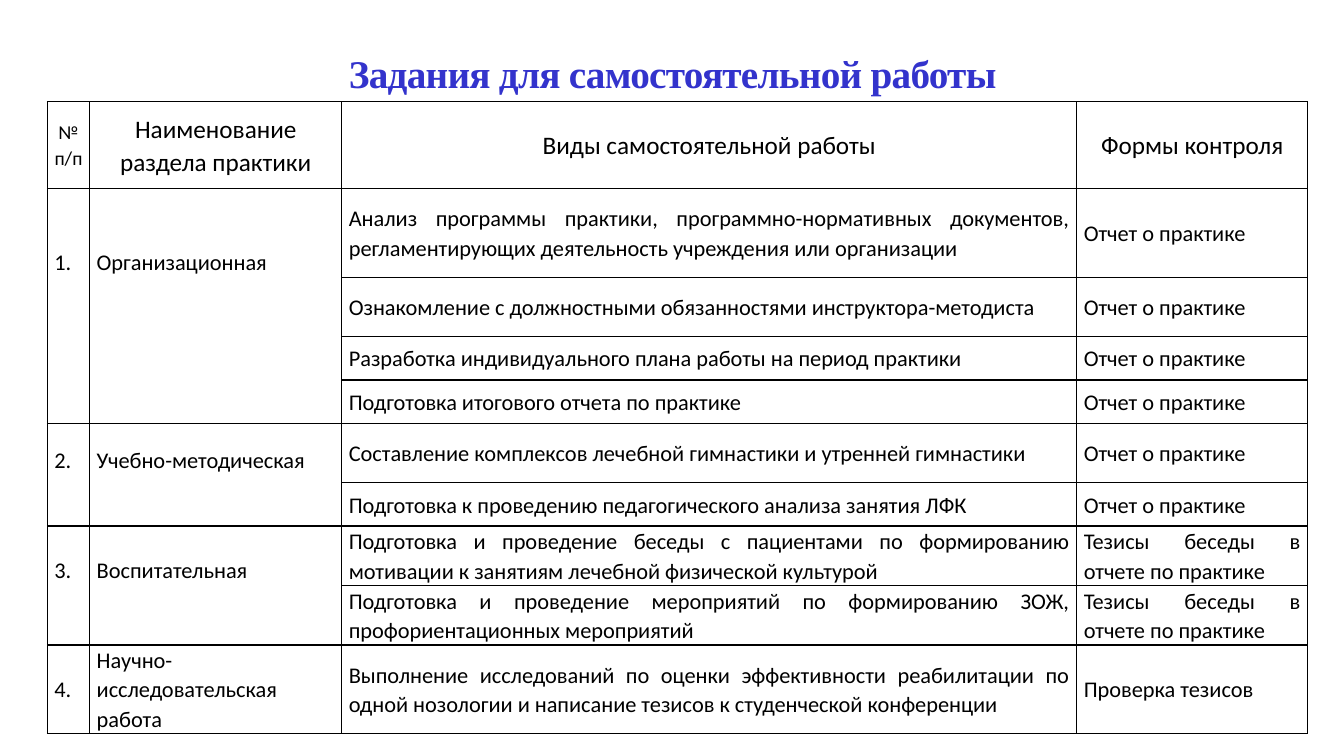
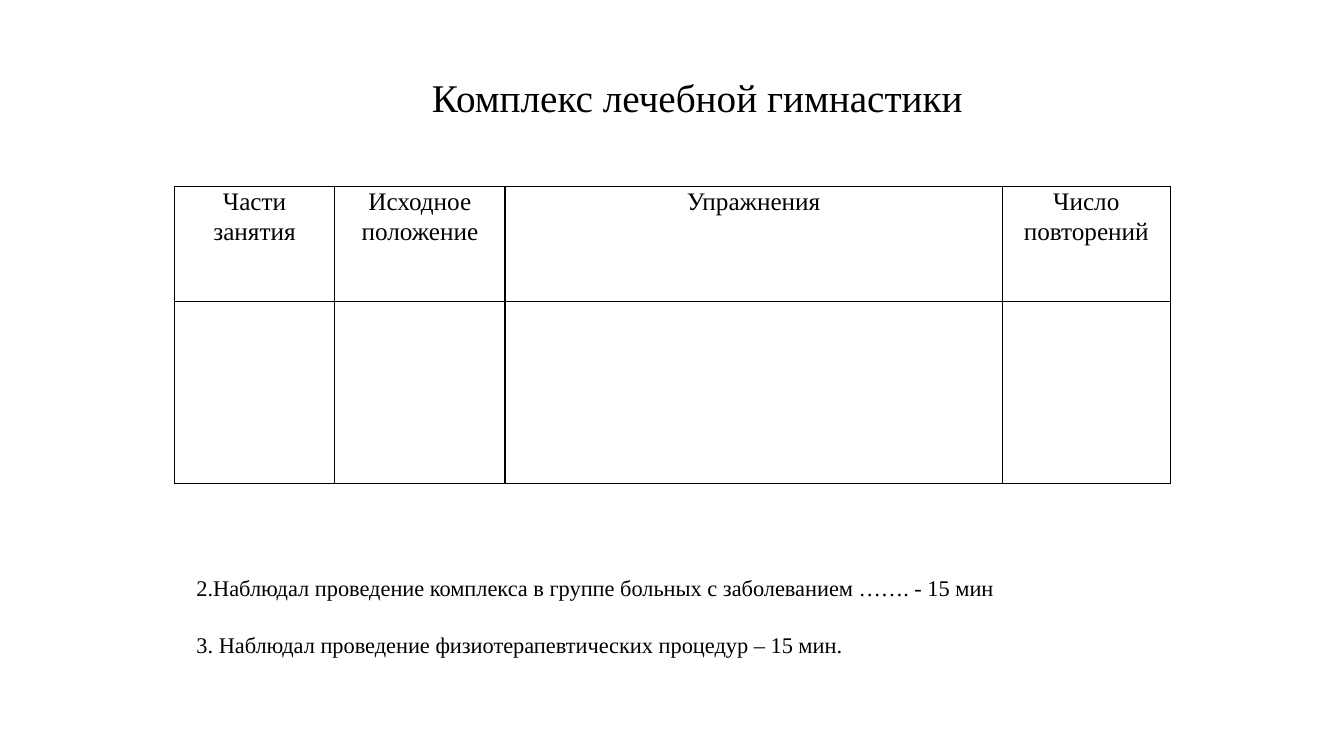
from lxml import etree
from pptx import Presentation
from pptx.dml.color import RGBColor
from pptx.enum.text import MSO_ANCHOR, MSO_AUTO_SIZE, PP_ALIGN
from pptx.oxml.ns import qn
from pptx.util import Inches, Pt

COLORS = {"text": "000000", "title": "3333CC", "line": "000000", "cell": "FFFFFF"}
SERIF, SANS = "Times New Roman", "Calibri"
TITLE_SIZE = 28
LINE_SPACING = 1.07
INDENT = Inches(0.49)
CELL_MARGIN = Inches(0.07)
REPORT = "Отчет о практике"
THESES = "Тезисы беседы в отчете по практике"

# Practice sections: number, name, top margin of the label, tasks (work, control)
SECTIONS = [
    ("1.", "Организационная", 0.58, [
        ("Анализ программы практики, программно-нормативных документов, "
         "регламентирующих деятельность учреждения или организации", REPORT),
        ("Ознакомление с должностными обязанностями инструктора-методиста", REPORT),
        ("Разработка индивидуального плана работы на период практики", REPORT),
        ("Подготовка итогового отчета по практике", REPORT),
    ]),
    ("2.", "Учебно-методическая", 0.22, [
        ("Составление комплексов лечебной гимнастики и утренней гимнастики", REPORT),
        ("Подготовка к проведению педагогического анализа занятия ЛФК", REPORT),
    ]),
    ("3.", "Воспитательная", 0.29, [
        ("Подготовка и проведение беседы с пациентами по формированию мотивации "
         "к занятиям лечебной физической культурой", THESES),
        ("Подготовка и проведение мероприятий по формированию ЗОЖ, "
         "профориентационных мероприятий", THESES),
    ]),
    ("4.", "Научно-исследовательская работа", 0, [
        ("Выполнение исследований по оценки эффективности реабилитации по одной "
         "нозологии и написание тезисов к студенческой конференции", "Проверка тезисов"),
    ]),
]


def rgb(name):
    return RGBColor.from_string(COLORS[name])


def format_paragraph(p, size, font=SERIF, align=PP_ALIGN.CENTER, color="text",
                     bold=False, spacing=LINE_SPACING, indent=None):
    p.alignment = align
    p.line_spacing = spacing
    if indent is not None:
        pPr = p._p.get_or_add_pPr()
        pPr.set("marL", "0")
        pPr.set("indent", str(indent))
    p.font.name = font
    p.font.size = Pt(size)
    p.font.bold = bold
    p.font.color.rgb = rgb(color)


def add_title_slide(prs, text, height, **style):
    s = prs.slides.add_slide(prs.slide_layouts[5])
    sp = s.shapes.title
    sp.left, sp.top = Inches(0.92), Inches(0.4)
    sp.width, sp.height = Inches(11.5), Inches(height)
    tf = sp.text_frame
    tf.text = text
    tf.auto_size = MSO_AUTO_SIZE.NONE
    tf.vertical_anchor = MSO_ANCHOR.MIDDLE
    format_paragraph(tf.paragraphs[0], TITLE_SIZE, **style)
    return s


def style_cell(cell):
    """White fill and a thin line on all four sides."""
    cell.fill.solid()
    cell.fill.fore_color.rgb = rgb("cell")
    cell.margin_left = cell.margin_right = CELL_MARGIN
    cell.margin_top = cell.margin_bottom = 0
    tcPr = cell._tc.get_or_add_tcPr()
    for i, side in enumerate(("lnL", "lnR", "lnT", "lnB")):
        ln = etree.Element(qn(f"a:{side}"), w=str(Pt(1)))
        fill = etree.SubElement(ln, qn("a:solidFill"))
        etree.SubElement(fill, qn("a:srgbClr"), val=COLORS["line"])
        tcPr.insert(i, ln)


def add_grid(s, left, top, cols, rows):
    frame = s.shapes.add_table(len(rows), len(cols), Inches(left), Inches(top),
                               Inches(sum(cols)), Inches(sum(rows)))
    table = frame.table
    table.first_row = table.horz_banding = False
    for col, width in zip(table.columns, cols):
        col.width = Inches(width)
    for row, height in zip(table.rows, rows):
        row.height = Inches(height)
    for cell in table.iter_cells():
        style_cell(cell)
    return table


def fill_cell(cell, text, size, anchor=MSO_ANCHOR.MIDDLE, **style):
    cell.text = text
    cell.vertical_anchor = anchor
    for p in cell.text_frame.paragraphs:
        format_paragraph(p, size, **style)


def add_notes_text(s, lines, left, top, width, height):
    sp = s.shapes.add_textbox(Inches(left), Inches(top), Inches(width), Inches(height))
    tf = sp.text_frame
    tf.word_wrap = True
    tf.text = "\n".join(lines)
    for i, p in enumerate(tf.paragraphs):
        format_paragraph(p, 16, align=PP_ALIGN.JUSTIFY, indent=INDENT)
        if i:
            p.space_before = Pt(20)


def build_tasks(prs):
    s = add_title_slide(prs, "Задания для самостоятельной работы", 0.71,
                        color="title", bold=True, spacing=0.9)
    r = s.shapes.title.text_frame.paragraphs[0].runs[0]
    r._r.get_or_add_rPr().set("spc", "-50")

    table = add_grid(s, 0.47, 1.01, [0.42, 2.5, 7.29, 2.29],
                     [0.86, 0.88, 0.59, 0.43, 0.43, 0.59, 0.43, 0.59, 0.59, 0.88])
    # Header row
    headers = [("№\nп/п", 14), ("Наименование раздела практики", 18),
               ("Виды самостоятельной работы", 18), ("Формы контроля", 18)]
    for col, (text, size) in enumerate(headers):
        fill_cell(table.cell(0, col), text, size, font=SANS)

    # Sections, with number and name merged over their tasks
    body = {"size": 16, "font": SANS, "align": PP_ALIGN.JUSTIFY}
    row = 1
    for number, name, margin, tasks in SECTIONS:
        last = row + len(tasks) - 1
        for col, text in enumerate((number, name)):
            cell = table.cell(row, col)
            if last > row:
                cell.merge(table.cell(last, col))
            anchor = MSO_ANCHOR.TOP if margin else MSO_ANCHOR.MIDDLE
            fill_cell(cell, text, anchor=anchor, **body)
            cell.margin_top = Inches(margin)
        for i, task in enumerate(tasks):
            for col, text in enumerate(task, start=2):
                fill_cell(table.cell(row + i, col), text, **body)
        row = last + 1


def build_exercises(prs):
    s = add_title_slide(prs, "Комплекс лечебной гимнастики", 1.45, indent=INDENT)
    s.shapes.title.text_frame.margin_bottom = Inches(0.42)

    table = add_grid(s, 1.73, 1.85, [1.59, 1.69, 4.93, 1.67], [1.14, 1.81])
    headers = ["Части занятия", "Исходное положение", "Упражнения", "Число повторений"]
    for col, text in enumerate(headers):
        fill_cell(table.cell(0, col), text, 18, anchor=MSO_ANCHOR.TOP)

    add_notes_text(s, [
        "2.Наблюдал проведение комплекса в группе больных с заболеванием ……. - 15 мин",
        "3. Наблюдал проведение физиотерапевтических процедур – 15 мин.",
    ], 1.36, 5.63, 9.99, 0.97)


def main():
    prs = Presentation()
    prs.slide_width, prs.slide_height = Inches(13.33), Inches(7.5)
    build_tasks(prs)
    build_exercises(prs)
    prs.save("out.pptx")


if __name__ == "__main__":
    main()
